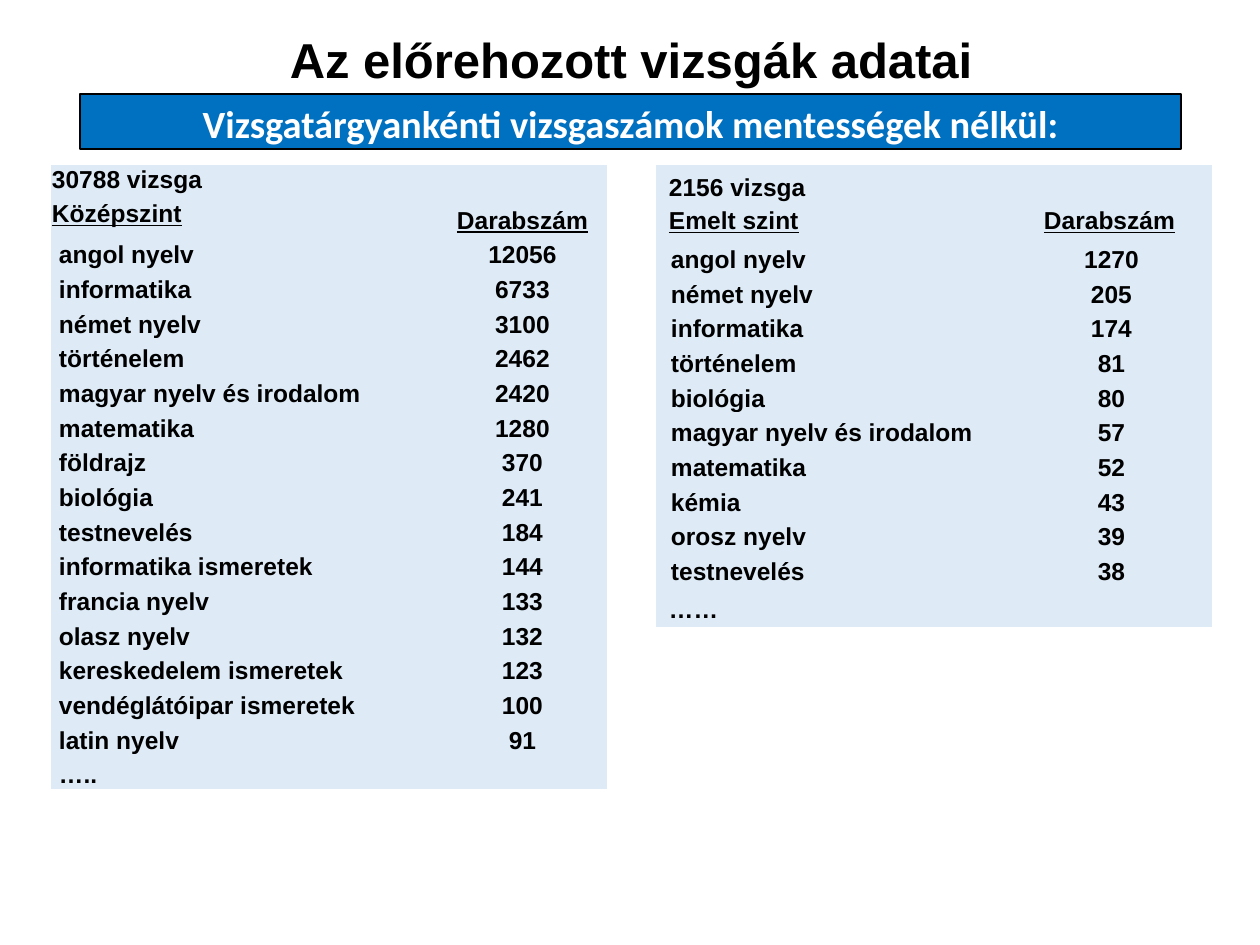
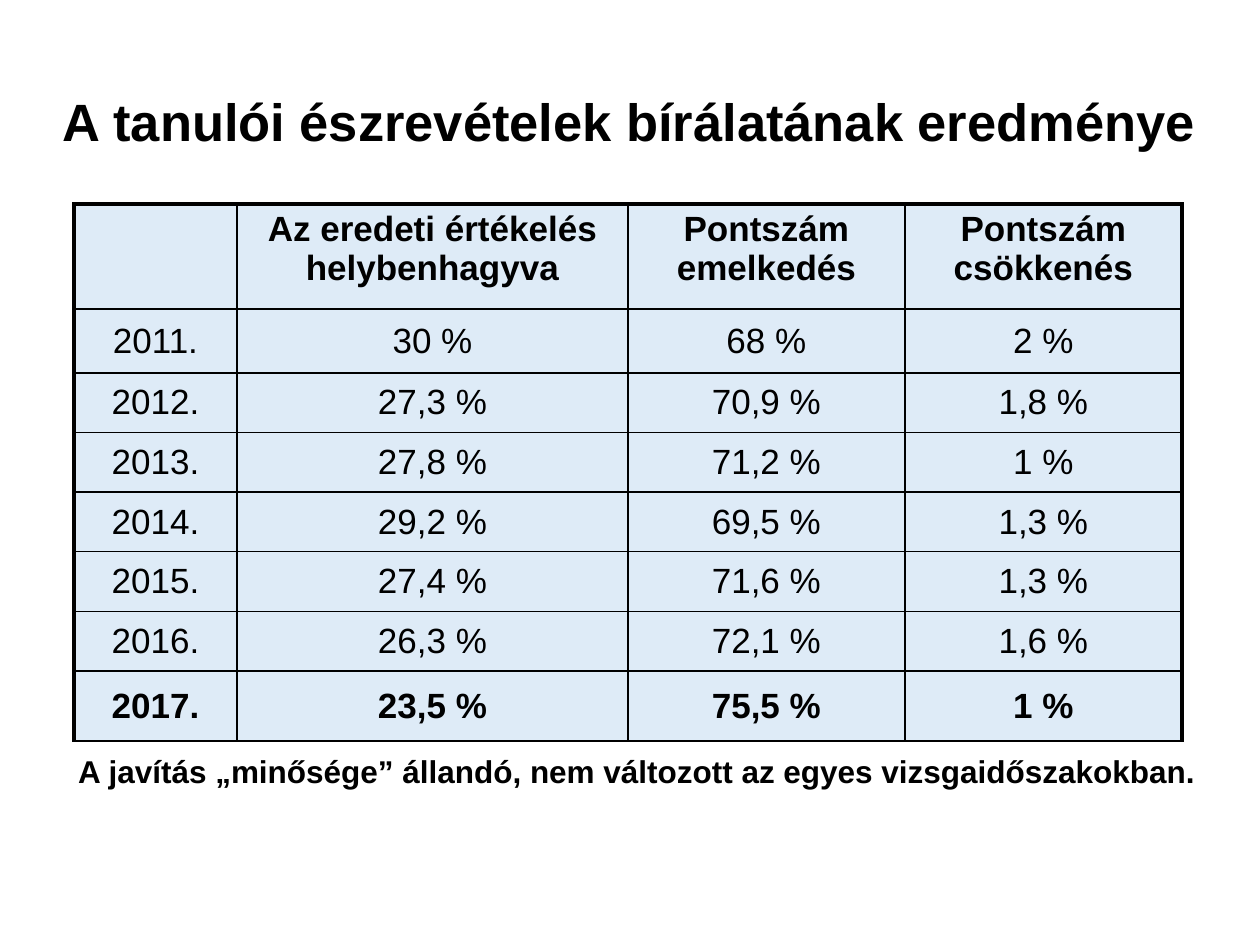
from lxml import etree
from pptx import Presentation
from pptx.dml.color import RGBColor
from pptx.enum.shapes import MSO_SHAPE
from pptx.enum.text import MSO_ANCHOR, PP_ALIGN
from pptx.oxml.ns import qn
from pptx.util import Emu, Pt

# Shared style
BLACK = RGBColor(0x00, 0x00, 0x00)
WHITE = RGBColor(0xFF, 0xFF, 0xFF)
BAND_BLUE = RGBColor(0x00, 0x70, 0xC0)
CELL_BLUE = RGBColor(0xDE, 0xEB, 0xF7)
LEFT, CENTER = PP_ALIGN.LEFT, PP_ALIGN.CENTER
TOP, MIDDLE, BOTTOM = MSO_ANCHOR.TOP, MSO_ANCHOR.MIDDLE, MSO_ANCHOR.BOTTOM
RECTANGLE = MSO_SHAPE.RECTANGLE
PLAIN_TABLE = "{2D5ABB26-0587-4C30-8999-92F81FD0307C}"
PX_PER_INCH = 126
SIDE, EDGE = 13, 6  # usual text margins
THICK, THIN = 2.25, 1


def px(length):
    return Emu(round(length * 914400 / PX_PER_INCH))


class Deck:
    def __init__(self):
        self.presentation = Presentation()
        self.presentation.slide_width = px(1260)
        self.presentation.slide_height = px(945)
        self.slide = None

    def add_slide(self):
        layout = self.presentation.slide_layouts[6]
        self.slide = self.presentation.slides.add_slide(layout)

    def fill_paragraph(self, paragraph, text, size, bold=True, align=CENTER, color=BLACK,
                       font="Arial", underline=False, line_spacing=None):
        paragraph.alignment = align
        if line_spacing:
            paragraph.line_spacing = line_spacing
        if not text:
            etree.SubElement(paragraph._p, qn("a:endParaRPr"), sz=str(size * 100))
            return
        run = paragraph.add_run()
        run.text = text
        run.font.name = font
        run.font.size = Pt(size)
        run.font.bold = bold
        run.font.underline = underline
        run.font.color.rgb = color

    def text(self, box, text, size, anchor=MIDDLE, **style):
        frame = self.slide.shapes.add_textbox(*map(px, box)).text_frame
        frame.word_wrap = True
        frame.vertical_anchor = anchor
        self.fill_paragraph(frame.paragraphs[0], text, size, **style)

    def band(self, box, text):
        shape = self.slide.shapes.add_shape(RECTANGLE, *map(px, box))
        shape.shadow.inherit = False
        shape.fill.solid()
        shape.fill.fore_color.rgb = BAND_BLUE
        shape.line.color.rgb = BLACK
        shape.line.width = Pt(0.75)
        shape.text_frame.vertical_anchor = TOP
        self.fill_paragraph(shape.text_frame.paragraphs[0], text, 22,
                            color=WHITE, font="Calibri")

    def table(self, left, top, widths, row_blocks):
        """Each row block is (total height, number of equal rows)."""
        heights = [px(height) // count for height, count in row_blocks
                   for _ in range(count)]
        frame = self.slide.shapes.add_table(
            len(heights), len(widths), px(left), px(top), px(sum(widths)), sum(heights))
        table = frame.table
        table.first_row = table.horz_banding = False
        table._tbl.tblPr.find(qn("a:tableStyleId")).text = PLAIN_TABLE
        for column, width in zip(table.columns, widths):
            column.width = px(width)
        for row, height in zip(table.rows, heights):
            row.height = Emu(height)
        return table

    def cell(self, cell, text, size, anchor=BOTTOM, margins=(1, 1, 1, 0), **style):
        cell.fill.solid()
        cell.fill.fore_color.rgb = CELL_BLUE
        cell.vertical_anchor = anchor
        (cell.margin_left, cell.margin_top,
         cell.margin_right, cell.margin_bottom) = map(px, margins)
        self.fill_paragraph(cell.text_frame.paragraphs[0], text, size, **style)

    def borders(self, cell, **widths):
        properties = cell._tc.get_or_add_tcPr()
        for index, side in enumerate("LRTB"):
            line = etree.Element(qn(f"a:ln{side}"), w=str(int(Pt(widths[side]))))
            fill = etree.SubElement(line, qn("a:solidFill"))
            etree.SubElement(fill, qn("a:srgbClr"), val=str(BLACK))
            properties.insert(index, line)

    def subject_rows(self, table, first_row, subjects, indent):
        for row, (subject, count) in enumerate(subjects, first_row):
            self.cell(table.cell(row, 0), subject, 14, align=LEFT, margins=(indent, 1, 1, 0))
            self.cell(table.cell(row, 1), count, 14)


INTERMEDIATE = [
    ("angol nyelv", "12056"), ("informatika", "6733"), ("német nyelv", "3100"),
    ("történelem", "2462"), ("magyar nyelv és irodalom", "2420"),
    ("matematika", "1280"), ("földrajz", "370"), ("biológia", "241"),
    ("testnevelés", "184"), ("informatika ismeretek", "144"),
    ("francia nyelv", "133"), ("olasz nyelv", "132"),
    ("kereskedelem ismeretek", "123"), ("vendéglátóipar ismeretek", "100"),
    ("latin nyelv", "91"), ("…..", ""),
]
ADVANCED = [
    ("angol nyelv", "1270"), ("német nyelv", "205"), ("informatika", "174"),
    ("történelem", "81"), ("biológia", "80"), ("magyar nyelv és irodalom", "57"),
    ("matematika", "52"), ("kémia", "43"), ("orosz nyelv", "39"), ("testnevelés", "38"),
]
REVIEW_RESULTS = [
    ("", "Az eredeti értékelés helybenhagyva", "Pontszám emelkedés", "Pontszám csökkenés"),
    ("2011.", "30 %", "68 %", "2 %"),
    ("2012.", "27,3 %", "70,9 %", "1,8 %"),
    ("2013.", "27,8 %", "71,2 %", "1 %"),
    ("2014.", "29,2 %", "69,5 %", "1,3 %"),
    ("2015.", "27,4 %", "71,6 %", "1,3 %"),
    ("2016.", "26,3 %", "72,1 %", "1,6 %"),
    ("2017.", "23,5 %", "75,5 %", "1 %"),
]


def add_exam_counts(deck):
    deck.add_slide()
    deck.text((137, 10, 988, 98), "Az előrehozott vizsgák adatai", 28)
    deck.band((80, 94, 1101, 55), "Vizsgatárgyankénti vizsgaszámok mentességek nélkül:")

    # Advanced level
    table = deck.table(656, 165, (355, 201), [(74, 1), (347, 10), (41, 1)])
    heading = table.cell(0, 0)
    deck.cell(heading, "2156 vizsga", 14, margins=(SIDE, EDGE, SIDE, EDGE),
              align=LEFT, line_spacing=0.6)
    level = heading.text_frame.add_paragraph()
    level.space_before = Pt(9.5)
    deck.fill_paragraph(level, "Emelt szint", 14, align=LEFT, underline=True,
                        line_spacing=0.6)
    deck.cell(table.cell(0, 1), "Darabszám", 14, margins=(33, EDGE, SIDE, EDGE),
              align=LEFT, underline=True, line_spacing=0.6)
    deck.subject_rows(table, 1, ADVANCED, 15)
    for column, text in enumerate(("……", "")):
        deck.cell(table.cell(11, column), text, 14, margins=(SIDE, EDGE, SIDE, EDGE),
                  align=LEFT, line_spacing=0.45)

    # Intermediate level
    table = deck.table(51, 165, (387, 169), [(625, 18)])
    deck.cell(table.cell(0, 0), "30788 vizsga", 14, anchor=TOP, align=LEFT)
    deck.cell(table.cell(1, 0), "Középszint", 14, anchor=TOP, align=LEFT, underline=True)
    deck.cell(table.cell(0, 1), "Darabszám", 14, underline=True)
    deck.cell(table.cell(1, 1), "", 14)
    table.cell(0, 1).merge(table.cell(1, 1))
    deck.subject_rows(table, 2, INTERMEDIATE, 8)


def add_review_results(deck):
    deck.add_slide()
    deck.text((34, 76, 1191, 89), "A tanulói észrevételek bírálatának eredménye", 30)
    deck.text((44, 750, 1186, 47),
              "A javítás „minősége” állandó, nem változott az egyes vizsgaidőszakokban.",
              18, anchor=TOP, line_spacing=0.9)

    # Results by year, with a thick frame on the left, top and right
    table = deck.table(74, 204, (163, 391, 277, 277), [(105, 1), (64, 1), (298, 5), (70, 1)])
    last_row, last_column = len(REVIEW_RESULTS) - 1, len(REVIEW_RESULTS[0]) - 1
    for row, values in enumerate(REVIEW_RESULTS):
        for column, value in enumerate(values):
            cell = table.cell(row, column)
            deck.cell(cell, value, 20, anchor=MIDDLE if row else TOP,
                      margins=(SIDE, EDGE, SIDE, EDGE), bold=row in (0, last_row))
            deck.borders(cell, L=THIN if column else THICK,
                         R=THICK if column == last_column else THIN,
                         T=THIN if row else THICK, B=THIN)


def main():
    deck = Deck()
    add_exam_counts(deck)
    add_review_results(deck)
    deck.presentation.save("out.pptx")


if __name__ == "__main__":
    main()
